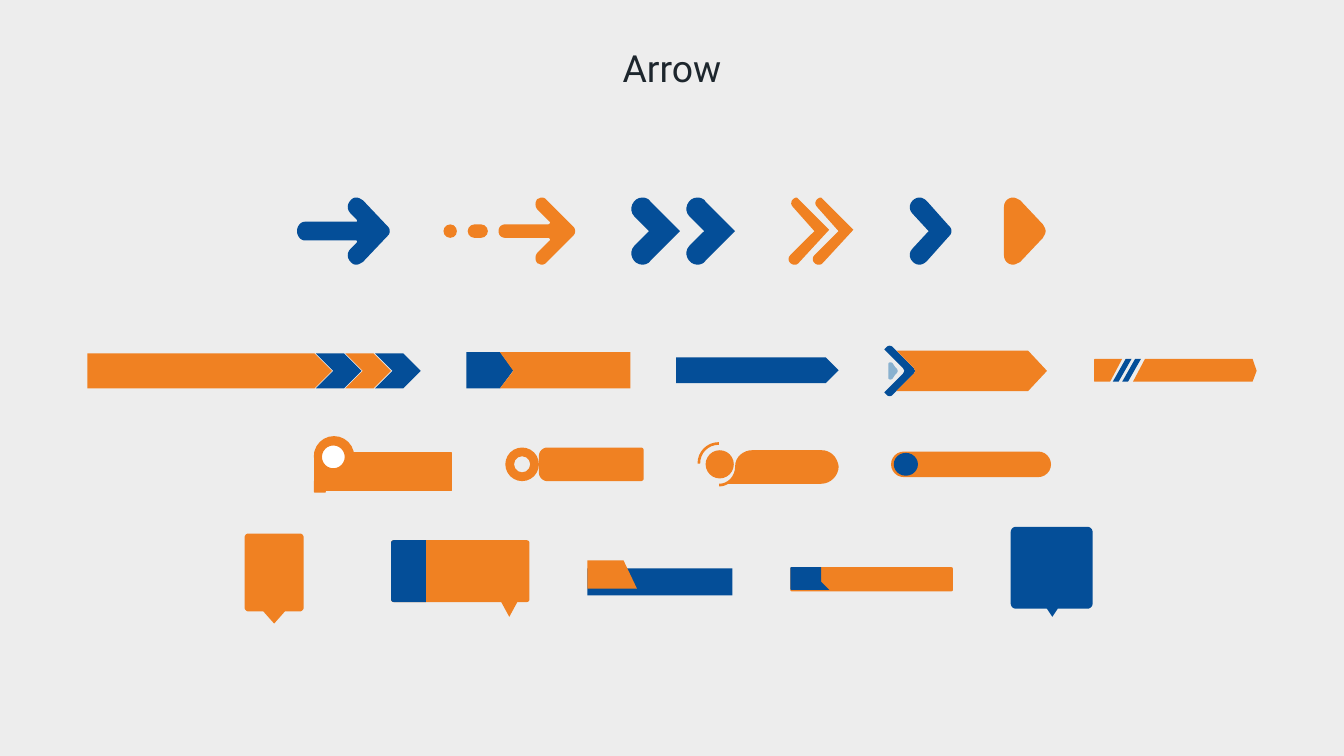
from dataclasses import dataclass
from typing import Optional, Union

from pptx import Presentation
from pptx.dml.color import RGBColor
from pptx.enum.shapes import MSO_SHAPE
from pptx.enum.text import MSO_ANCHOR, PP_ALIGN
from pptx.util import Inches, Pt

Point = tuple[float, float]
CURVE_PIECES = 8


@dataclass(frozen=True)
class Theme:
    background: str = "EDEDED"
    blue: str = "044E98"
    orange: str = "F08122"
    pale_blue: str = "89B1CF"
    white: str = "FFFFFF"
    ink: str = "1D262D"
    font: str = "Roboto"
    title_size: float = 20
    edge_width: float = 0.75


THEME = Theme()
BLUE, ORANGE = THEME.blue, THEME.orange


@dataclass(frozen=True)
class Preset:
    kind: MSO_SHAPE
    left: float
    top: float
    width: float
    height: float
    color: str
    adjust: Optional[float] = None
    edged: bool = False


@dataclass(frozen=True)
class Outline:
    """Steps of two numbers are lines, of six are curves; axis mirrors them downwards."""
    color: str
    start: Point
    steps: tuple[tuple[float, ...], ...]
    axis: Optional[float] = None
    shifts: tuple[float, ...] = (0,)


def bubble(color: str, left: float, top: float, right: float, bottom: float,
           radius: float, tail: Point, tail_half: float) -> Outline:
    tail_x, tail_y = tail
    pull = 0.45 * radius
    return Outline(color, (left + radius, top), (
        (right - radius, top),
        (right - pull, top, right, top + pull, right, top + radius),
        (right, bottom - radius),
        (right, bottom - pull, right - pull, bottom, right - radius, bottom),
        (tail_x + tail_half, bottom), (tail_x, tail_y), (tail_x - tail_half, bottom),
        (left + radius, bottom),
        (left + pull, bottom, left, bottom - pull, left, bottom - radius),
        (left, top + radius),
        (left, top + pull, left + pull, top, left + radius, top)))


ROUND_ARROWS = [
    Outline(BLUE, (2.21, 1.72), (
        (2.21, 1.68, 2.24, 1.65, 2.27, 1.65), (2.65, 1.65),
        (2.66, 1.65, 2.66, 1.64, 2.65, 1.63), (2.61, 1.59),
        (2.58, 1.56, 2.58, 1.52, 2.61, 1.49), (2.62, 1.48, 2.63, 1.47, 2.65, 1.47),
        (2.67, 1.47, 2.68, 1.48, 2.7, 1.49), (2.88, 1.68),
        (2.89, 1.69, 2.9, 1.7, 2.9, 1.72)), axis=1.72),
    Outline(BLUE, (4.83, 1.72), (
        (4.82, 1.71), (4.72, 1.61), (4.67, 1.56, 4.71, 1.47, 4.78, 1.47),
        (4.8, 1.47, 4.83, 1.48, 4.84, 1.5), (5.05, 1.71), (5.06, 1.72)),
        axis=1.72, shifts=(0, 0.41)),
    Outline(ORANGE, (3.71, 1.72), (
        (3.71, 1.69, 3.73, 1.67, 3.76, 1.67), (4.08, 1.67),
        (4.09, 1.67, 4.1, 1.65, 4.09, 1.65), (4, 1.56),
        (3.98, 1.54, 3.98, 1.5, 4, 1.48), (4.01, 1.48, 4.02, 1.47, 4.03, 1.47),
        (4.05, 1.47, 4.06, 1.48, 4.07, 1.49), (4.26, 1.68),
        (4.27, 1.69, 4.28, 1.7, 4.28, 1.72)), axis=1.72),
    Preset(MSO_SHAPE.ROUNDED_RECTANGLE, 3.48, 1.67, 0.15, 0.1, ORANGE, 0.5),
    Preset(MSO_SHAPE.OVAL, 3.3, 1.67, 0.1, 0.1, ORANGE),
    Outline(BLUE, (6.91, 1.72), (
        (6.79, 1.59), (6.74, 1.54, 6.79, 1.47, 6.84, 1.47),
        (6.86, 1.47, 6.88, 1.48, 6.9, 1.5), (7.06, 1.68),
        (7.07, 1.69, 7.08, 1.7, 7.08, 1.72)), axis=1.72),
    Outline(ORANGE, (6.06, 1.72), (
        (5.9, 1.54), (5.87, 1.51, 5.9, 1.47, 5.93, 1.47),
        (5.93, 1.47, 5.94, 1.48, 5.95, 1.49), (6.17, 1.71), (5.94, 1.96),
        (5.93, 1.97, 5.92, 1.97, 5.91, 1.97), (5.88, 1.97, 5.85, 1.93, 5.88, 1.9)),
        shifts=(0.18, 0)),
    Outline(ORANGE, (7.47, 1.72), (
        (7.47, 1.54), (7.47, 1.5, 7.5, 1.47, 7.54, 1.47),
        (7.55, 1.47, 7.57, 1.48, 7.59, 1.49), (7.76, 1.67),
        (7.77, 1.69, 7.78, 1.7, 7.78, 1.72)), axis=1.72),
]

ARROW_BANNERS = [
    Preset(MSO_SHAPE.PENTAGON, 0.65, 2.63, 1.82, 0.26, ORANGE, 0.5),
    *(Preset(MSO_SHAPE.CHEVRON, 2.35 + 0.22 * i, 2.63, 0.34, 0.26, color, 0.5)
      for i, color in enumerate((BLUE, ORANGE, BLUE))),
    Preset(MSO_SHAPE.PENTAGON, 3.47, 2.62, 0.35, 0.27, BLUE, 0.37),
    Outline(ORANGE, (3.72, 2.62), ((3.82, 2.76), (3.72, 2.89), (4.69, 2.89), (4.69, 2.62))),
    Preset(MSO_SHAPE.PENTAGON, 5.03, 2.66, 1.21, 0.19, BLUE, 0.5),
    Outline(BLUE, (6.73, 2.76), (
        (6.72, 2.74), (6.58, 2.6), (6.6, 2.58), (6.61, 2.57, 6.63, 2.57, 6.64, 2.58),
        (6.8, 2.74), (6.81, 2.76)), axis=2.76),
    Outline(THEME.pale_blue, (6.61, 2.76), (
        (6.61, 2.71), (6.61, 2.7, 6.62, 2.69, 6.64, 2.7), (6.66, 2.73),
        (6.67, 2.74, 6.68, 2.75, 6.68, 2.76)), axis=2.76),
    Outline(ORANGE, (6.81, 2.76), ((6.8, 2.74), (6.67, 2.61), (7.65, 2.61), (7.79, 2.76)),
            axis=2.76),
    Outline(ORANGE, (8.52, 2.67), ((8.43, 2.84), (9.32, 2.84), (9.35, 2.76), (9.32, 2.67))),
    Outline(ORANGE, (8.35, 2.67), (
        (8.15, 2.67), (8.14, 2.67, 8.14, 2.68, 8.14, 2.69), (8.14, 2.83),
        (8.14, 2.84, 8.14, 2.84, 8.15, 2.84), (8.26, 2.84))),
    *(Preset(MSO_SHAPE.PARALLELOGRAM, left, 2.67, 0.14, 0.17, BLUE, 0.69)
      for left in (8.28, 8.35)),
]

ROUND_LABELS = [
    Preset(MSO_SHAPE.RECTANGLE, 2.34, 3.37, 1.02, 0.28, ORANGE, edged=True),
    Preset(MSO_SHAPE.RIGHT_TRIANGLE, 2.34, 3.58, 0.08, 0.08, ORANGE, edged=True),
    Preset(MSO_SHAPE.OVAL, 2.34, 3.25, 0.29, 0.29, ORANGE, edged=True),
    Preset(MSO_SHAPE.OVAL, 2.38, 3.29, 0.21, 0.21, ORANGE, edged=True),
    Preset(MSO_SHAPE.OVAL, 2.39, 3.31, 0.18, 0.18, THEME.white, edged=True),
    Preset(MSO_SHAPE.DONUT, 3.76, 3.33, 0.25, 0.25, ORANGE, 0.26),
    Outline(ORANGE, (4.07, 3.33), (
        (4.77, 3.33), (4.78, 3.33, 4.79, 3.34, 4.79, 3.35), (4.79, 3.56),
        (4.79, 3.57, 4.78, 3.58, 4.77, 3.58), (4.07, 3.58),
        (4.04, 3.58, 4.01, 3.55, 4.01, 3.52), (4.01, 3.39),
        (4.01, 3.36, 4.04, 3.33, 4.07, 3.33))),
    Outline(ORANGE, (5.35, 3.29), (
        (5.26, 3.29, 5.19, 3.36, 5.19, 3.45), (5.21, 3.45),
        (5.21, 3.37, 5.27, 3.31, 5.35, 3.31))),
    Preset(MSO_SHAPE.OVAL, 5.25, 3.35, 0.21, 0.21, ORANGE),
    Outline(ORANGE, (5.6, 3.35), (
        (5.53, 3.35, 5.47, 3.4, 5.47, 3.47), (5.47, 3.54, 5.42, 3.6, 5.35, 3.6),
        (5.35, 3.62), (5.38, 3.62, 5.4, 3.61, 5.42, 3.6), (6.11, 3.6),
        (6.18, 3.6, 6.24, 3.54, 6.24, 3.47), (6.23, 3.4, 6.18, 3.35, 6.11, 3.35))),
    Preset(MSO_SHAPE.ROUNDED_RECTANGLE, 6.63, 3.36, 1.19, 0.19, ORANGE, 0.5),
    Preset(MSO_SHAPE.OVAL, 6.65, 3.37, 0.18, 0.17, BLUE),
]

CALLOUTS = [
    bubble(ORANGE, 1.82, 3.97, 2.26, 4.55, 0.03, (2.04, 4.64), 0.08),
    bubble(ORANGE, 2.91, 4.02, 3.94, 4.48, 0.02, (3.79, 4.59), 0.06),
    Outline(BLUE, (2.93, 4.02), (
        (2.92, 4.02, 2.91, 4.03, 2.91, 4.04), (2.91, 4.46),
        (2.91, 4.47, 2.92, 4.48, 2.93, 4.48), (3.17, 4.48), (3.17, 4.02))),
    Preset(MSO_SHAPE.RECTANGLE, 4.37, 4.23, 1.08, 0.2, BLUE),
    Outline(ORANGE, (4.37, 4.17), ((4.37, 4.38), (4.74, 4.38), (4.64, 4.17))),
    Preset(MSO_SHAPE.ROUNDED_RECTANGLE, 5.88, 4.22, 1.21, 0.18, ORANGE, 0.06),
    Outline(BLUE, (5.9, 4.22), (
        (5.89, 4.22, 5.88, 4.22, 5.88, 4.23), (5.88, 4.38),
        (5.88, 4.39, 5.89, 4.39, 5.9, 4.39), (6.17, 4.39), (6.11, 4.33), (6.11, 4.22))),
    bubble(BLUE, 7.52, 3.92, 8.13, 4.53, 0.04, (7.83, 4.59), 0.04),
]


def trace(outline: Outline) -> list[Point]:
    """Turn lines and cubic curves into the corner points of a closed polygon."""
    points = [outline.start]
    for step in outline.steps:
        if len(step) == 2:
            points.append(step)
            continue
        x0, y0 = points[-1]
        x1, y1, x2, y2, x3, y3 = step
        for piece in range(1, CURVE_PIECES + 1):
            t = piece / CURVE_PIECES
            a, b, c, d = (1 - t) ** 3, 3 * t * (1 - t) ** 2, 3 * t * t * (1 - t), t ** 3
            points.append((a * x0 + b * x1 + c * x2 + d * x3,
                           a * y0 + b * y1 + c * y2 + d * y3))
    if outline.axis is not None:
        points += [(x, 2 * outline.axis - y) for x, y in reversed(points)]
    return points


def paint(shape, color: str, edged: bool = False) -> None:
    shape.shadow.inherit = False
    shape.fill.solid()
    shape.fill.fore_color.rgb = RGBColor.from_string(color)
    if edged:
        shape.line.color.rgb = RGBColor.from_string(ORANGE)
        shape.line.width = Pt(THEME.edge_width)
    else:
        shape.line.fill.background()


def draw(slide, item: Union[Preset, Outline]) -> None:
    if isinstance(item, Preset):
        box = map(Inches, (item.left, item.top, item.width, item.height))
        shape = slide.shapes.add_shape(item.kind, *box)
        if item.adjust is not None:
            shape.adjustments[0] = item.adjust
        paint(shape, item.color, item.edged)
        return
    for shift in item.shifts:
        first, *rest = [(Inches(x + shift), Inches(y)) for x, y in trace(item)]
        builder = slide.shapes.build_freeform(*first, scale=1.0)
        builder.add_line_segments(rest, close=True)
        paint(builder.convert_to_shape(), item.color)


def add_text(slide, text: str, *, left: float, top: float, width: float, height: float,
             size: float, color: str) -> None:
    box = slide.shapes.add_textbox(*map(Inches, (left, top, width, height)))
    frame = box.text_frame
    frame.word_wrap = True
    frame.vertical_anchor = MSO_ANCHOR.MIDDLE
    frame.margin_left = frame.margin_right = Inches(0.1)
    frame.margin_top = frame.margin_bottom = Inches(0.1)
    paragraph = frame.paragraphs[0]
    paragraph.alignment = PP_ALIGN.CENTER
    run = paragraph.add_run()
    run.text = text
    run.font.name = THEME.font
    run.font.size = Pt(size)
    run.font.color.rgb = RGBColor.from_string(color)


def main() -> None:
    deck = Presentation()
    deck.slide_width = Inches(10)
    deck.slide_height = deck.slide_width * 9 // 16
    slide = deck.slides.add_slide(deck.slide_layouts[6])
    slide.background.fill.solid()
    slide.background.fill.fore_color.rgb = RGBColor.from_string(THEME.background)
    add_text(slide, "Arrow", left=0, top=0, width=10, height=1,
             size=THEME.title_size, color=THEME.ink)
    for item in ROUND_ARROWS + ARROW_BANNERS + ROUND_LABELS + CALLOUTS:
        draw(slide, item)
    deck.save("out.pptx")


if __name__ == "__main__":
    main()
